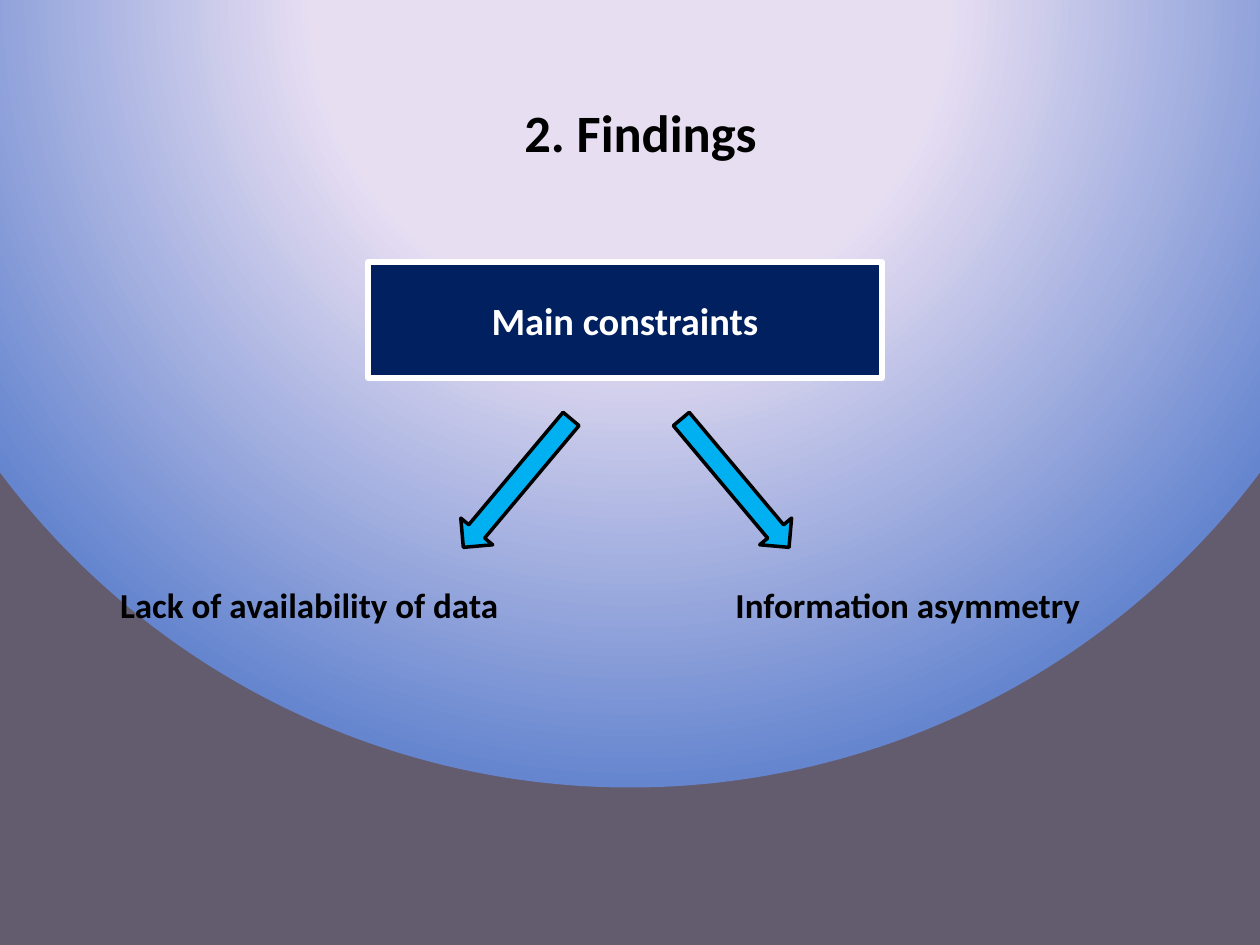
from pptx import Presentation
from pptx.dml.color import RGBColor
from pptx.enum.shapes import MSO_SHAPE
from pptx.enum.text import MSO_ANCHOR, PP_ALIGN
from pptx.oxml import parse_xml
from pptx.oxml.ns import nsdecls
from pptx.util import Inches, Pt

BLACK = RGBColor(0x00, 0x00, 0x00)
WHITE = RGBColor(0xFF, 0xFF, 0xFF)
NAVY = RGBColor(0x00, 0x20, 0x60)
SKY = RGBColor(0x00, 0xB0, 0xF0)
LILAC = RGBColor(0xE7, 0xDE, 0xF2)
BLUE = RGBColor(0x65, 0x85, 0xCF)
GREY = RGBColor(0x63, 0x5B, 0x6E)
FONT = "Calibri"


def set_background(page, stops):
    """Fill the page with a circular gradient centred above its top edge."""
    stop_xml = "".join(
        f'<a:gs pos="{percent * 1000}"><a:srgbClr val="{color}"/></a:gs>'
        for percent, color in stops
    )
    background = parse_xml(
        f'<p:bg {nsdecls("p", "a")}><p:bgPr><a:gradFill rotWithShape="1">'
        f'<a:gsLst>{stop_xml}</a:gsLst><a:path path="circle">'
        '<a:fillToRect l="50000" t="-80000" r="50000" b="180000"/>'
        "</a:path></a:gradFill><a:effectLst/></p:bgPr></p:bg>"
    )
    page.element.cSld.insert(0, background)


def write_text(shape, text, size, color, anchor):
    """Put one bold, centred line into a shape."""
    frame = shape.text_frame
    frame.word_wrap = True
    frame.vertical_anchor = anchor
    para = frame.paragraphs[0]
    para.alignment = PP_ALIGN.CENTER
    span = para.add_run()
    span.text = text
    font_format = {"name": FONT, "size": Pt(size), "bold": True}
    for name, value in font_format.items():
        setattr(span.font, name, value)
    span.font.color.rgb = color


def add_label(page, text, place, size, anchor=MSO_ANCHOR.TOP):
    box = page.shapes.add_textbox(*map(Inches, place))
    write_text(box, text, size, BLACK, anchor)


def add_block(page, kind, place, fill, line, line_width):
    shape = page.shapes.add_shape(kind, *map(Inches, place))
    shape.shadow.inherit = False
    shape.fill.solid()
    shape.fill.fore_color.rgb = fill
    shape.line.color.rgb = line
    shape.line.width = Pt(line_width)
    return shape


def main():
    deck = Presentation()
    deck.slide_width, deck.slide_height = Inches(10), Inches(7.5)
    page = deck.slides.add_slide(deck.slide_layouts[6])
    set_background(page, [(40, LILAC), (100, BLUE), (100, GREY)])

    # Title
    add_label(page, "2. Findings", (0.67, 0.58, 8.83, 0.92), 30, MSO_ANCHOR.MIDDLE)

    # Main box
    constraints = add_block(
        page, MSO_SHAPE.RECTANGLE, (2.92, 2.08, 4.08, 0.92), NAVY, WHITE, 3
    )
    write_text(constraints, "Main constraints", 22, WHITE, MSO_ANCHOR.MIDDLE)

    # The two constraints
    add_label(page, "Lack of availability of data", (0.58, 4.58, 3.75, 0.67), 20)
    add_label(page, "Information asymmetry", (4.83, 4.58, 4.75, 0.5), 20)

    # Arrows from the box to each constraint
    for left, angle in ((3.94, 40), (5.67, 320)):
        arrow = add_block(
            page, MSO_SHAPE.DOWN_ARROW, (left, 3.17, 0.33, 1.33), SKY, BLACK, 2
        )
        arrow.rotation = angle

    deck.save("out.pptx")


if __name__ == "__main__":
    main()
